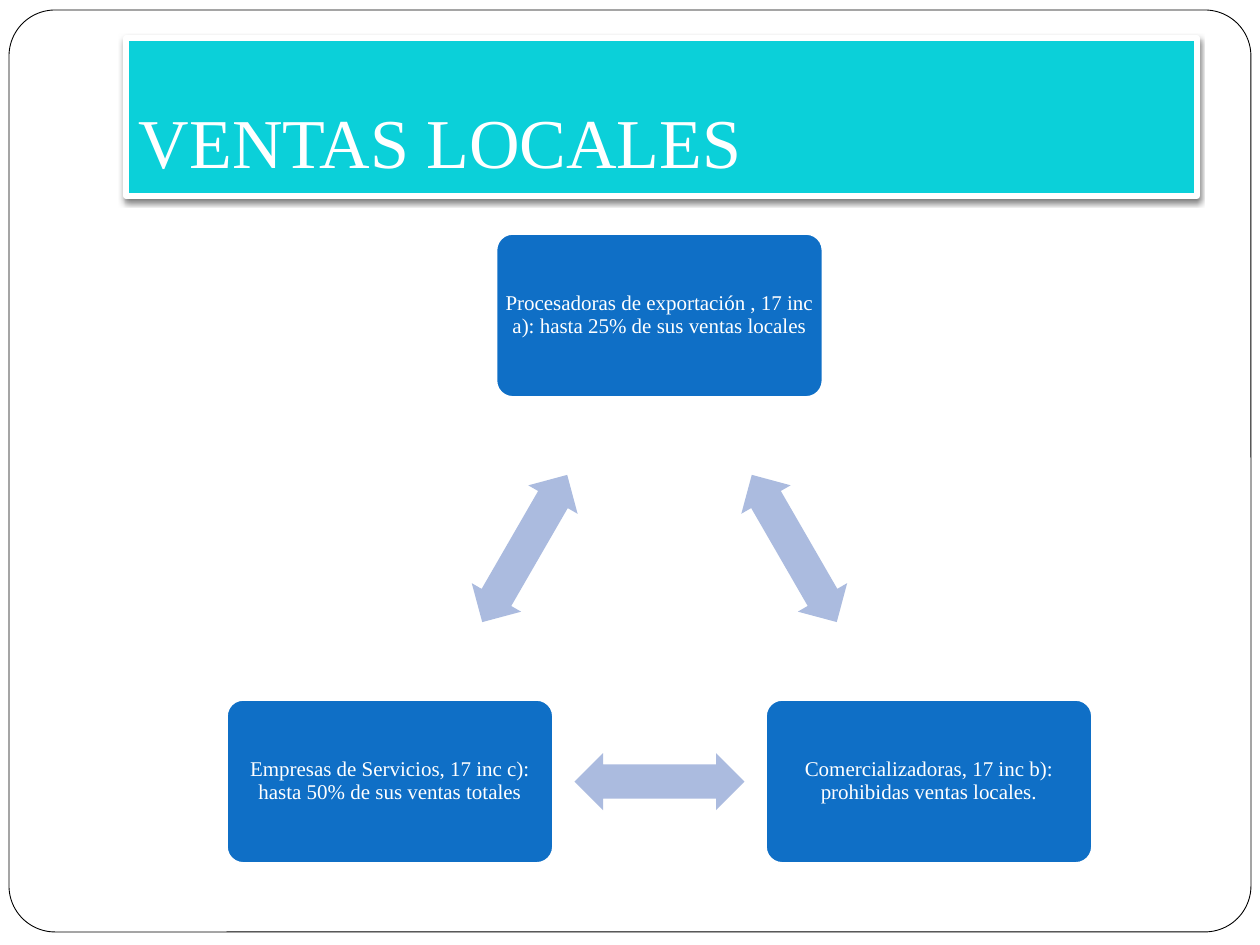
import itertools
import math

import lxml.etree
import pptx
import pptx.dml.color
import pptx.enum.shapes
import pptx.enum.text
import pptx.oxml
import pptx.oxml.ns
import pptx.util

PX = 914400 / 126
WHITE = pptx.dml.color.RGBColor(0xFF, 0xFF, 0xFF)
BLACK = pptx.dml.color.RGBColor(0, 0, 0)
TURQUOISE = pptx.dml.color.RGBColor(0x0B, 0xD0, 0xD9)
BLUE = pptx.dml.color.RGBColor(0x0F, 0x6F, 0xC6)
LAVENDER = pptx.dml.color.RGBColor(0xAB, 0xBB, 0xDF)
SHAPES = pptx.enum.shapes.MSO_SHAPE
ANCHOR = pptx.enum.text.MSO_ANCHOR
ALIGN = pptx.enum.text.PP_ALIGN

CATEGORIES = [
    "Procesadoras de exportación , 17 inc a): hasta 25% de sus ventas locales",
    "Comercializadoras, 17 inc b): prohibidas ventas locales.",
    "Empresas de Servicios, 17 inc c): hasta 50% de sus ventas totales",
]
TITLE_SHADOW = (
    f'<a:effectLst {pptx.oxml.ns.nsdecls("a")}>'
    '<a:outerShdw blurRad="38100" dist="25400" dir="5400000" rotWithShape="0">'
    '<a:srgbClr val="000000"><a:alpha val="50000"/></a:srgbClr>'
    '</a:outerShdw></a:effectLst>'
)


def emu(px):
    """Turn px into EMU."""
    return pptx.util.Emu(round(px * PX))


def assign(target, values):
    """Set each attribute of the target from a dict."""
    for name, value in values.items():
        setattr(target, name, value)


def paint(shape, fill, line=None, width=0):
    """Give a shape a solid fill and an outline, or no outline."""
    shape.fill.solid()
    shape.fill.fore_color.rgb = fill
    if line is None:
        shape.line.fill.background()
    else:
        shape.line.color.rgb = line
        shape.line.width = pptx.util.Pt(width)


def add_part(slide, kind, box, adjustments):
    """Add a preset shape without shadow in a px box."""
    part = slide.shapes.add_shape(kind, *map(emu, box))
    part.shadow.inherit = False
    for index, value in enumerate(adjustments):
        part.adjustments[index] = value
    return part


def write(shape, text, size, frame_format, paragraph_format):
    """Write one formatted white paragraph in a shape."""
    frame = shape.text_frame
    frame.text = text
    assign(frame, {"word_wrap": True,
                   "auto_size": pptx.enum.text.MSO_AUTO_SIZE.NONE, **frame_format})
    paragraph = frame.paragraphs[0]
    assign(paragraph, paragraph_format)
    font = paragraph.runs[0].font
    assign(font, {"name": "Times New Roman", "size": pptx.util.Pt(size)})
    font.color.rgb = WHITE


def build_border(slide, box):
    """Put the rounded page border behind everything."""
    border = add_part(slide, SHAPES.ROUNDED_RECTANGLE, box, [0.05])
    paint(border, WHITE, BLACK, 0.5)
    slide.shapes._spTree.insert(2, border._element)


def build_title(slide, box, text):
    """Place the title banner with its white edge and shadow."""
    title = slide.shapes.title
    assign(title, dict(zip(("left", "top", "width", "height"), map(emu, box))))
    paint(title, TURQUOISE, WHITE, 3)
    title._element.spPr.append(pptx.oxml.parse_xml(TITLE_SHADOW))
    write(title, text, 40,
          {"vertical_anchor": ANCHOR.BOTTOM, "margin_left": emu(13),
           "margin_right": emu(13), "margin_top": emu(6), "margin_bottom": emu(13)},
          {"alignment": ALIGN.LEFT})


def build_triangle(slide, box, categories):
    """Set three categories in a triangle joined by double arrows."""
    left, top, width, height = box
    card_width, card_height = 326, 163
    arrow_width, arrow_height = 170, 57
    bottom = top + height - card_height / 2
    centers = [
        (left + width / 2, top + card_height / 2),
        (left + width - card_width / 2, bottom),
        (left + card_width / 2, bottom),
    ]
    margins = dict.fromkeys(
        ("margin_left", "margin_right", "margin_top", "margin_bottom"), emu(2))
    for (x, y), category in zip(centers, categories):
        card = add_part(slide, SHAPES.ROUNDED_RECTANGLE,
                        (x - card_width / 2, y - card_height / 2, card_width, card_height),
                        [0.1])
        paint(card, BLUE, WHITE, 1)
        write(card, category, 12, {"vertical_anchor": ANCHOR.MIDDLE, **margins},
              {"alignment": ALIGN.CENTER, "line_spacing": 0.9,
               "space_after": pptx.util.Pt(4)})
    for (x1, y1), (x2, y2) in itertools.pairwise(centers + centers[:1]):
        arrow = add_part(slide, SHAPES.LEFT_RIGHT_ARROW,
                         ((x1 + x2 - arrow_width) / 2, (y1 + y2 - arrow_height) / 2,
                          arrow_width, arrow_height), [0.6, 0.5])
        paint(arrow, LAVENDER)
        arrow.rotation = round(math.degrees(math.atan2(y2 - y1, x2 - x1))) % 360


def main():
    """Build and save the slide."""
    presentation = pptx.Presentation()
    assign(presentation, {"slide_width": emu(1260), "slide_height": emu(945)})
    slide = presentation.slides.add_slide(presentation.slide_layouts[5])
    build_border(slide, (9, 10, 1242, 922))
    build_title(slide, (126, 38, 1071, 158), "VENTAS LOCALES")
    build_triangle(slide, (227, 234, 865, 629), CATEGORIES)
    presentation.save("out.pptx")


if __name__ == "__main__":
    main()
